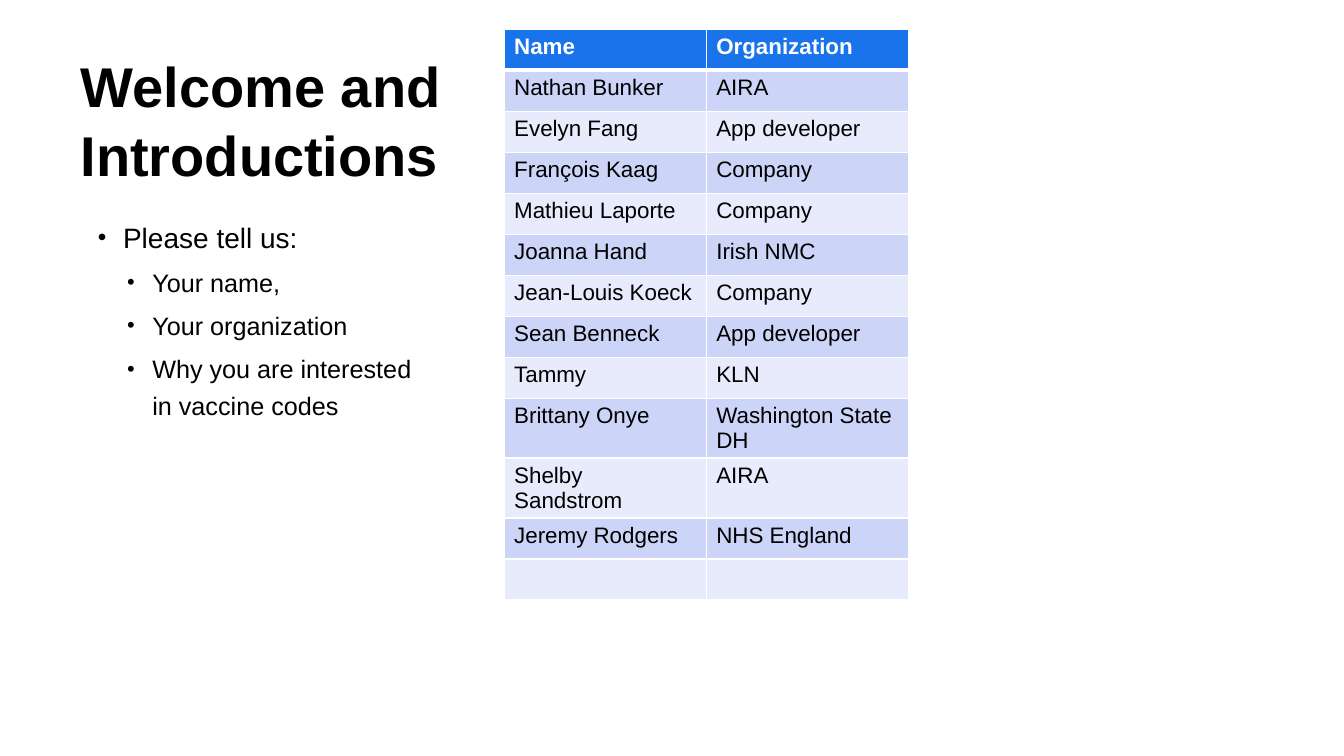
from pptx import Presentation
from pptx import util as u
from pptx.dml.color import RGBColor
from pptx.enum import text
from pptx.oxml import ns, xmlchemy

BLACK = RGBColor(0x00, 0x00, 0x00)
WHITE = RGBColor(0xFF, 0xFF, 0xFF)
HEADER_BLUE = RGBColor(0x19, 0x73, 0xEB)
BAND_DARK = RGBColor(0xCC, 0xD5, 0xF7)
BAND_LIGHT = RGBColor(0xE8, 0xEB, 0xFB)

PROMPTS = [
    (0, "Please tell us:"),
    (1, "Your name,"),
    (1, "Your organization"),
    (1, "Why you are interested in vaccine codes"),
]
ATTENDEES = [
    ("Name", "Organization"),
    ("Nathan Bunker", "AIRA"),
    ("Evelyn Fang", "App developer"),
    ("François Kaag", "Company"),
    ("Mathieu Laporte", "Company"),
    ("Joanna Hand", "Irish NMC"),
    ("Jean-Louis Koeck", "Company"),
    ("Sean Benneck", "App developer"),
    ("Tammy", "KLN"),
    ("Brittany Onye", "Washington State DH"),
    ("Shelby Sandstrom", "AIRA"),
    ("Jeremy Rodgers", "NHS England"),
    ("", ""),
]


def add_child(parent, tag, **attributes):
    child = xmlchemy.OxmlElement(tag)
    for name, value in attributes.items():
        child.set(name, str(value))
    parent.append(child)
    return child


def write(para, words, size, color=BLACK, bold=False):
    para.alignment = text.PP_ALIGN.LEFT
    para.font.size = u.Pt(size)
    if words:
        span = para.add_run()
        span.text = words
        span.font.name = "Arial"
        span.font.size = u.Pt(size)
        span.font.bold = bold
        span.font.color.rgb = color


def place(shape, left, top, width, height):
    """Move a placeholder to its box and return its top-anchored text frame."""
    shape.left, shape.top = u.Inches(left), u.Inches(top)
    shape.width, shape.height = u.Inches(width), u.Inches(height)
    frame = shape.text_frame
    frame.word_wrap = True
    frame.auto_size = text.MSO_AUTO_SIZE.NONE
    frame.vertical_anchor = text.MSO_ANCHOR.TOP
    return frame


def fill_title(shape, *box):
    frame = place(shape, *box)
    frame.margin_top = u.Inches(0.08)
    para = frame.paragraphs[0]
    para.line_spacing = 1.04
    write(para, "Welcome and Introductions", size=40, bold=True)


def fill_prompts(shape, *box):
    frame = place(shape, *box)
    for index, (level, words) in enumerate(PROMPTS):
        para = frame.add_paragraph() if index else frame.paragraphs[0]
        para.level = level
        para.line_spacing = 1.2
        para.space_before = u.Pt(5 if index else 0)
        properties = para._p.get_or_add_pPr()
        properties.set("marL", str(u.Inches(0.54 if level else 0.25)))
        properties.set("indent", str(u.Inches(-0.25)))
        add_child(properties, "a:buSzPct", val=87000)
        add_child(properties, "a:buFont", typeface="Arial")
        add_child(properties, "a:buChar", char="•")
        write(para, words, size=18 if level else 20)


def add_borders(cell, bottom):
    properties = cell._tc.get_or_add_tcPr()
    for side, points in (("L", 1), ("R", 1), ("T", 1), ("B", bottom)):
        line = add_child(properties, f"a:ln{side}", w=u.Pt(points))
        add_child(add_child(line, "a:solidFill"), "a:srgbClr", val=WHITE)


def add_attendees(page, left, top, width, height):
    frame = page.shapes.add_table(
        len(ATTENDEES), 2, u.Inches(left), u.Inches(top), u.Inches(width), u.Inches(height)
    )
    for row, entry in enumerate(ATTENDEES):
        header = row == 0
        band = HEADER_BLUE if header else BAND_DARK if row % 2 else BAND_LIGHT
        for column, words in enumerate(entry):
            cell = frame.table.cell(row, column)
            add_borders(cell, bottom=3 if header else 1)
            cell.fill.solid()
            cell.fill.fore_color.rgb = band
            write(cell.text_frame.paragraphs[0], words, size=16,
                  color=WHITE if header else BLACK, bold=header)


def add_welcome_slide(deck):
    page = deck.slides.add_slide(deck.slide_layouts[1])
    fill_title(page.shapes.title, 0.7, 0.4, 4.53, 1.74)
    fill_prompts(page.placeholders[1], 0.87, 2.07, 3.47, 3.9)
    add_attendees(page, 5, 0.29, 4.01, 5.29)


def main():
    deck = Presentation()
    deck.slide_width, deck.slide_height = u.Inches(13.33), u.Inches(7.5)
    add_welcome_slide(deck)
    deck.save("out.pptx")


if __name__ == "__main__":
    main()
